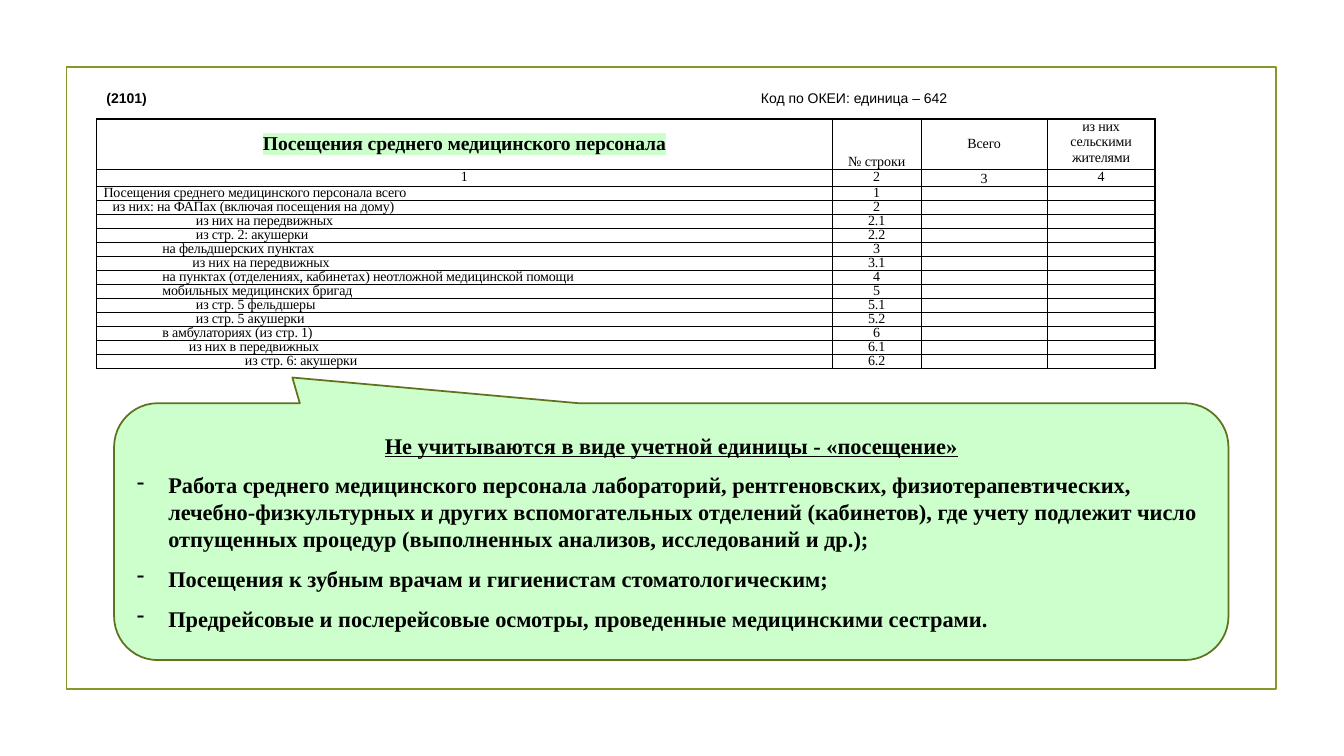
from dataclasses import dataclass

from lxml import etree
from pptx import Presentation
from pptx import util as u
from pptx.dml.color import RGBColor
from pptx.enum import shapes, text
from pptx.oxml import ns

SERIF, SANS = "Times New Roman", "Arial"
BLACK, MINT, OLIVE, DARK_OLIVE = "000000", "CCFFCC", "83992A", "61711F"
LEFT, CENTER = text.PP_ALIGN.LEFT, text.PP_ALIGN.CENTER
TOP, MIDDLE, BOTTOM = (text.MSO_ANCHOR.TOP, text.MSO_ANCHOR.MIDDLE,
                       text.MSO_ANCHOR.BOTTOM)
ROW_HEIGHT = 10


@dataclass
class Heading:
    label: str
    number: str
    width: float
    anchor: text.MSO_ANCHOR
    number_anchor: text.MSO_ANCHOR = TOP


@dataclass
class VisitRow:
    label: str
    number: str
    indent: float


HEADINGS = [
    Heading("Посещения среднего медицинского персонала", "1", 525.5, MIDDLE),
    Heading("№ строки", "2", 63.5, BOTTOM),
    Heading("Всего", "3", 90, MIDDLE, BOTTOM),
    Heading("из них сельскими жителями", "4", 77, TOP),
]
VISITS = [
    VisitRow("Посещения среднего медицинского персонала всего", "1", 0),
    VisitRow("из них: на ФАПах (включая посещения на дому)", "2", 6.5),
    VisitRow("из них на передвижных", "2.1", 66),
    VisitRow("из стр. 2: акушерки", "2.2", 66),
    VisitRow("на фельдшерских пунктах", "3", 42),
    VisitRow("из них на передвижных", "3.1", 63.5),
    VisitRow("на пунктах (отделениях, кабинетах) неотложной медицинской помощи", "4", 42),
    VisitRow("мобильных медицинских бригад", "5", 42),
    VisitRow("из стр. 5 фельдшеры", "5.1", 66),
    VisitRow("из стр. 5 акушерки", "5.2", 66),
    VisitRow("в амбулаториях (из стр. 1)", "6", 42),
    VisitRow("из них в передвижных", "6.1", 61),
    VisitRow("из стр. 6: акушерки", "6.2", 101),
]
CALLOUT_TITLE = "Не учитываются в виде учетной единицы - «посещение»"
EXCLUSIONS = [
    "Работа среднего медицинского персонала лабораторий, рентгеновских, "
    "физиотерапевтических, лечебно-физкультурных и других вспомогательных отделений "
    "(кабинетов), где учету подлежит число отпущенных процедур (выполненных анализов, "
    "исследований и др.);",
    "Посещения к зубным врачам и гигиенистам стоматологическим;",
    "Предрейсовые и послерейсовые осмотры, проведенные медицинскими сестрами.",
]


def rgb(value: str) -> RGBColor:
    return RGBColor.from_string(value)


def add_node(parent, tag: str, **values):
    return etree.SubElement(parent, ns.qn(tag), values)


def add_span(para, words: str, **changes):
    """Add a run of black text; changes override the usual format."""
    span = para.add_run()
    span.text = words
    formats = {"size": u.Pt(10), "name": SERIF, "bold": False} | changes
    for key, value in formats.items():
        setattr(span.font, key, value)
    span.font.color.rgb = rgb(BLACK)
    return span


def set_indent(para, left: float, first: float = 0) -> None:
    props = para._p.get_or_add_pPr()
    props.set("marL", str(u.Pt(left)))
    props.set("indent", str(u.Pt(first)))


def add_shape(page, kind, left: float, top: float, width: float, height: float,
              line: str, fill: str = ""):
    shape = page.shapes.add_shape(kind, u.Pt(left), u.Pt(top), u.Pt(width), u.Pt(height))
    shape.shadow.inherit = False
    shape.line.color.rgb = rgb(line)
    shape.line.width = u.Pt(1.25)
    if fill:
        shape.fill.solid()
        shape.fill.fore_color.rgb = rgb(fill)
    else:
        shape.fill.background()
    return shape


def style_cell(cell, anchor) -> None:
    formats = {"margin_left": u.Pt(5), "margin_right": u.Pt(5), "margin_top": 0,
               "margin_bottom": 0, "vertical_anchor": anchor}
    for key, value in formats.items():
        setattr(cell, key, value)
    props = cell._tc.get_or_add_tcPr()
    for side in ("a:lnL", "a:lnR", "a:lnT", "a:lnB"):
        border = add_node(props, side, w=str(u.Pt(1)))
        add_node(add_node(border, "a:solidFill"), "a:srgbClr", val=BLACK)
    cell.fill.background()


def fill_cell(cell, words: str, anchor=TOP, align=CENTER, **changes):
    style_cell(cell, anchor)
    para = cell.text_frame.paragraphs[0]
    para.alignment = align
    if words:
        return add_span(para, words, **changes)
    add_node(para._p, "a:endParaRPr", sz="800")
    return None


def tighten(span) -> None:
    span._r.get_or_add_rPr().set("spc", "-10")


def add_visits_table(page) -> None:
    heights = [36, 12] + [ROW_HEIGHT] * len(VISITS)
    frame = page.shapes.add_table(
        len(heights), len(HEADINGS), u.Pt(69), u.Pt(85),
        u.Pt(sum(heading.width for heading in HEADINGS)), u.Pt(sum(heights)))
    table = frame.table
    table.first_row = table.horz_banding = False
    for row, height in zip(table.rows, heights):
        row.height = u.Pt(height)

    # Headings and column numbers
    for index, heading in enumerate(HEADINGS):
        table.columns[index].width = u.Pt(heading.width)
        changes = {"size": u.Pt(14), "bold": True} if index == 0 else {}
        span = fill_cell(table.cell(0, index), heading.label, heading.anchor, **changes)
        if index != 1:
            tighten(span)
        if index == 0:
            props = span._r.get_or_add_rPr()
            mark = add_node(props, "a:highlight")
            add_node(mark, "a:srgbClr", val=MINT)
            props.find(ns.qn("a:latin")).addprevious(mark)
        fill_cell(table.cell(1, index), heading.number, heading.number_anchor)

    # Visit rows, with two columns left to fill in
    for index, visit in enumerate(VISITS, start=2):
        tighten(fill_cell(table.cell(index, 0), visit.label, align=LEFT))
        set_indent(table.cell(index, 0).text_frame.paragraphs[0], visit.indent)
        for column, words in enumerate((visit.number, "", ""), start=1):
            fill_cell(table.cell(index, column), words)
        for column in range(len(HEADINGS)):
            para = table.cell(index, column).text_frame.paragraphs[0]
            para.line_spacing = u.Pt(ROW_HEIGHT)


def add_callout(page) -> None:
    box = add_shape(page, shapes.MSO_SHAPE.ROUNDED_RECTANGULAR_CALLOUT,
                    81.5, 288, 796, 183.5, DARK_OLIVE, MINT)
    for index, value in enumerate((-0.34, -0.6, 0.17)):
        box.adjustments[index] = value
    frame = box.text_frame
    frame.word_wrap = True
    frame.vertical_anchor = MIDDLE
    title = frame.paragraphs[0]
    title.alignment = CENTER
    add_span(title, CALLOUT_TITLE, size=u.Pt(16), bold=True, underline=True)
    for exclusion in EXCLUSIONS:
        para = frame.add_paragraph()
        para.alignment = LEFT
        para.space_before = u.Pt(9.2)
        set_indent(para, 22.5, -22.5)
        add_node(para._p.get_or_add_pPr(), "a:buChar", char="-")
        add_span(para, exclusion, size=u.Pt(16), bold=True)


def add_code_line(page) -> None:
    box = page.shapes.add_textbox(u.Pt(69), u.Pt(60), u.Pt(761), u.Pt(19.5))
    box.text_frame.word_wrap = True
    box.text_frame.vertical_anchor = MIDDLE
    para = box.text_frame.paragraphs[0]
    tabs = add_node(para._p.get_or_add_pPr(), "a:tabLst")
    add_node(tabs, "a:tab", pos=str(u.Pt(467.5)), algn="l")
    add_span(para, "(2101)\t", name=SANS, bold=True)
    add_span(para, "Код по ОКЕИ: единица – 642", name=SANS)


def main() -> None:
    deck = Presentation()
    deck.slide_width, deck.slide_height = u.Pt(960), u.Pt(540)
    page = deck.slides.add_slide(deck.slide_layouts[6])
    add_shape(page, shapes.MSO_SHAPE.RECTANGLE, 47.5, 48, 864, 444, OLIVE)
    add_visits_table(page)
    add_callout(page)
    add_code_line(page)
    deck.save("out.pptx")


if __name__ == "__main__":
    main()
